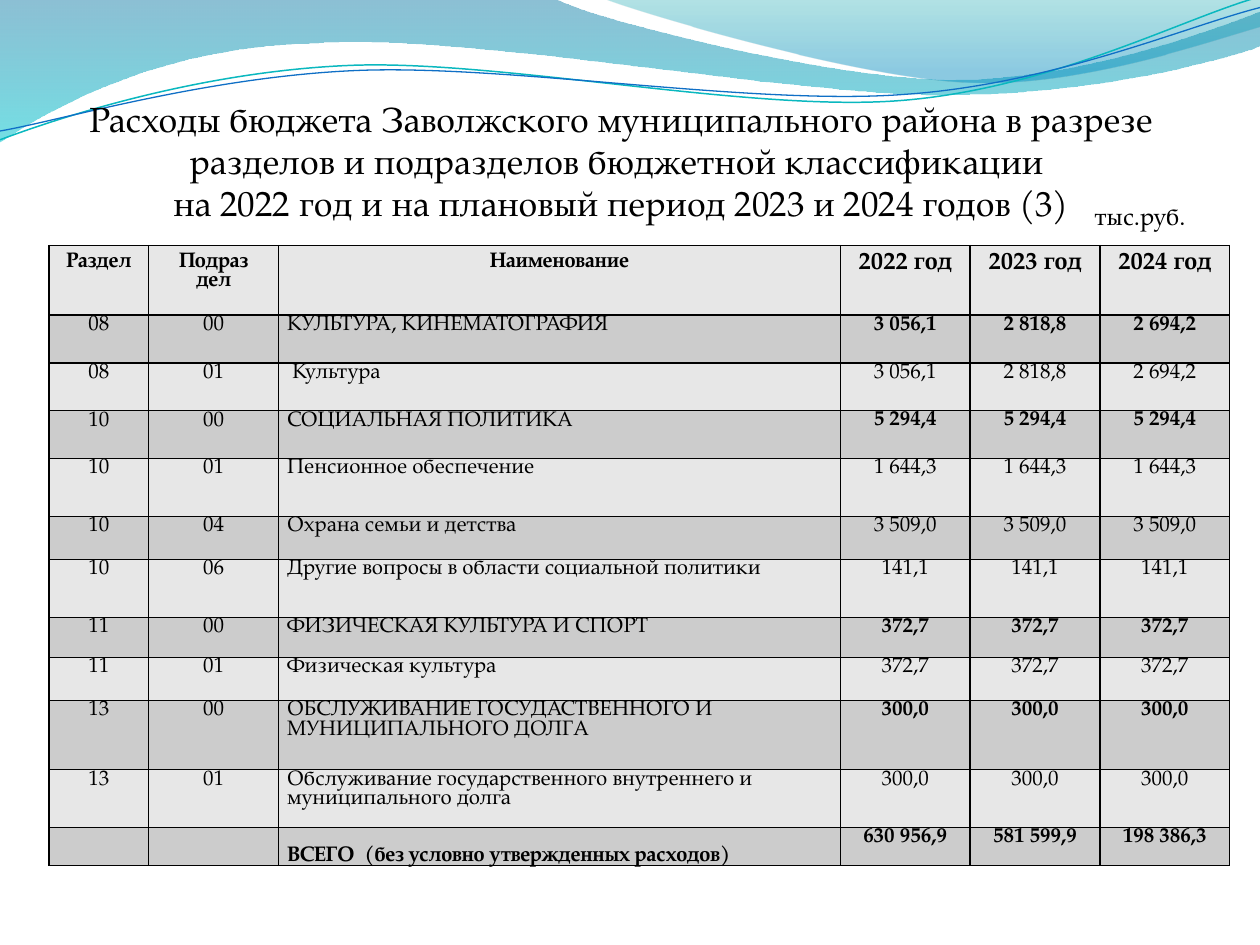
from dataclasses import dataclass
from typing import Optional

from lxml.etree import SubElement
from pptx import Presentation
from pptx.dml.color import RGBColor
from pptx.enum.lang import MSO_LANGUAGE_ID as Language
from pptx.enum.text import MSO_ANCHOR as Anchor, PP_ALIGN as Align
from pptx.oxml.ns import qn
from pptx.util import Inches, Pt

FONT = "TeX Gyre Pagella"
BLACK, LIGHT, DARK = "000000", "E7E7E7", "CCCCCC"


@dataclass
class Stop:
    position: float
    color: str
    opacity: int


@dataclass
class Wave:
    """Outline steps are points (x, y) or cubic curves (x1, y1, x2, y2, x, y)."""
    start: tuple
    steps: list
    stops: tuple = ()
    line: Optional[str] = None
    weight: float = 0


@dataclass
class BudgetRow:
    section: str
    subsection: str
    name: str
    amounts: tuple

    @property
    def is_total(self) -> bool:
        return not self.section

    @property
    def is_bold(self) -> bool:
        return self.subsection in ("00", "")


WAVES = [
    Wave((0, 0), [(4.4, -0.01), (4.76, 0.17, 6.64, 0.63, 7.58, 0.63),
                  (8.53, 0.63, 9.58, 0.26, 10, 0.09), (10.01, 0.36),
                  (9.83, 0.44, 8.7, 0.76, 7.46, 0.75),
                  (6.22, 0.75, 3.82, 0.28, 2.57, 0.34),
                  (1.29, 0.36, 0.46, 0.83, -0.01, 1.13)],
         stops=(Stop(0, "0074A1", 45), Stop(1, "00C6CF", 55))),
    Wave((4.79, -0.01), [(5.09, 0.11, 6.82, 0.62, 7.69, 0.65),
                         (8.56, 0.69, 9.61, 0.32, 10, 0.21), (10, 0)],
         stops=(Stop(0, "00A1A9", 30), Stop(0.8, "008BBF", 45))),
    Wave((0, 1.11), [(0.48, 0.93, 1.58, 0.57, 2.77, 0.52),
                     (3.95, 0.47, 5.93, 0.89, 7.13, 0.8),
                     (8.33, 0.71, 9.38, 0.15, 9.98, -0.02)],
         line="0AB8BF", weight=0.85),
    Wave((0, 1.04), [(0.47, 0.96, 1.64, 0.61, 2.83, 0.56),
                     (4.03, 0.51, 5.97, 0.84, 7.17, 0.75),
                     (8.36, 0.67, 9.41, 0.21, 10, 0.06)],
         line="0F6FC6", weight=0.75),
]

TITLE = ("Расходы бюджета Заволжского муниципального района в разрезе разделов "
         "и подразделов бюджетной классификации ",
         "на 2022 год и на плановый период 2023 и 2024 годов (3)")
HEADERS = ("Раздел", "Подраз\nдел", "Наименование", "2022 год", "2023 год", "2024 год")
ROWS = [
    BudgetRow("08", "00", "КУЛЬТУРА, КИНЕМАТОГРАФИЯ", ("3 056,1", "2 818,8", "2 694,2")),
    BudgetRow("08", "01", " Культура", ("3 056,1", "2 818,8", "2 694,2")),
    BudgetRow("10", "00", "СОЦИАЛЬНАЯ ПОЛИТИКА", ("5 294,4",) * 3),
    BudgetRow("10", "01", "Пенсионное обеспечение", ("1 644,3",) * 3),
    BudgetRow("10", "04", "Охрана семьи и детства", ("3 509,0",) * 3),
    BudgetRow("10", "06", "Другие вопросы в области социальной политики", ("141,1",) * 3),
    BudgetRow("11", "00", "ФИЗИЧЕСКАЯ КУЛЬТУРА И СПОРТ", ("372,7",) * 3),
    BudgetRow("11", "01", "Физическая культура", ("372,7",) * 3),
    BudgetRow("13", "00", "ОБСЛУЖИВАНИЕ ГОСУДАСТВЕННОГО И МУНИЦИПАЛЬНОГО ДОЛГА",
              ("300,0",) * 3),
    BudgetRow("13", "01", "Обслуживание государственного внутреннего и муниципального долга",
              ("300,0",) * 3),
    BudgetRow("", "", "ВСЕГО  (без условно утвержденных расходов)",
              ("630 956,9", "581 599,9", "198 386,3")),
]
NAME_COLUMN = 2
COLUMN_WIDTHS = (0.79, 1.03, 4.46, 1.03, 1.03, 1.03)
ROW_HEIGHTS = (0.55, 0.38, 0.38, 0.38, 0.46, 0.34, 0.46, 0.32, 0.34, 0.55, 0.46, 0.3)


def color(value: str) -> RGBColor:
    return RGBColor.from_string(value)


def apply(target, values: dict) -> None:
    for key, value in values.items():
        setattr(target, key, value)


def add_span(para, text: str, size: float, bold: bool = False) -> None:
    span = para.add_run()
    span.text = text
    apply(span.font, {"name": FONT, "size": Pt(size), "bold": bold,
                      "language_id": Language.RUSSIAN})
    span.font.color.rgb = color(BLACK)


def bend(shape, steps: list) -> None:
    """Join the three segments of each curved step into one cubic curve."""
    segments = iter(list(shape._element.iter(qn("a:lnTo"))))
    for step in steps:
        group = [next(segments) for _ in range(len(step) // 2)]
        if len(group) == 3:
            curve = SubElement(group[0].getparent(), qn("a:cubicBezTo"))
            group[0].addprevious(curve)
            for segment in group:
                curve.append(segment[0])
                segment.getparent().remove(segment)


def draw_wave(page, wave: Wave) -> None:
    points = [(Inches(step[i]), Inches(step[i + 1]))
              for step in wave.steps for i in range(0, len(step), 2)]
    builder = page.shapes.build_freeform(*map(Inches, wave.start))
    builder.add_line_segments(points, close=bool(wave.stops))
    shape = builder.convert_to_shape()
    bend(shape, wave.steps)
    shape.shadow.inherit = False
    if wave.line:
        shape.fill.background()
        shape.line.color.rgb = color(wave.line)
        shape.line.width = Pt(wave.weight)
        return
    shape.line.fill.background()
    shape.fill.gradient()
    shape.fill.gradient_angle = 270
    for target, stop in zip(shape.fill.gradient_stops, wave.stops):
        target.position = stop.position
        target.color.rgb = color(stop.color)
    for tint, stop in zip(shape._element.iter(qn("a:srgbClr")), wave.stops):
        SubElement(tint, qn("a:alpha"), val=str(stop.opacity * 1000))


def add_box(page, left: float, top: float, width: float, height: float, **frame_format):
    box = page.shapes.add_textbox(Inches(left), Inches(top), Inches(width), Inches(height))
    apply(box.text_frame, {"word_wrap": True, **frame_format})
    return box.text_frame.paragraphs[0]


def add_borders(cell) -> None:
    properties = cell._tc.get_or_add_tcPr()
    for side in ("a:lnL", "a:lnR", "a:lnT", "a:lnB"):
        border = SubElement(properties, qn(side), w=str(Pt(1)))
        fill = SubElement(border, qn("a:solidFill"))
        SubElement(fill, qn("a:srgbClr"), val=BLACK)


def fill_cell(cell, text: str, fill: str, size: float, bold: bool, align, **cell_format) -> None:
    add_borders(cell)
    cell.fill.solid()
    cell.fill.fore_color.rgb = color(fill)
    apply(cell, cell_format)
    frame = cell.text_frame
    for index, line in enumerate(text.split("\n")):
        para = frame.add_paragraph() if index else frame.paragraphs[0]
        apply(para, {"alignment": align, "line_spacing": 0.93})
        if line:
            add_span(para, line, size, bold)


def draw_table(page) -> None:
    table = page.shapes.add_table(
        len(ROW_HEIGHTS), len(COLUMN_WIDTHS), Inches(0.39), Inches(1.95),
        Inches(sum(COLUMN_WIDTHS)), Inches(sum(ROW_HEIGHTS))).table
    for column, width in zip(table.columns, COLUMN_WIDTHS):
        column.width = Inches(width)
    for row, height in zip(table.rows, ROW_HEIGHTS):
        row.height = Inches(height)

    for column, text in enumerate(HEADERS):
        size = 14 if column > NAME_COLUMN else 12
        fill_cell(table.cell(0, column), text, LIGHT, size, True, Align.CENTER)

    margins = {"margin_left": Inches(0.07), "margin_right": Inches(0.07),
               "margin_top": 0, "margin_bottom": 0}
    for index, row in enumerate(ROWS, start=1):
        for column, text in enumerate((row.section, row.subsection, row.name, *row.amounts)):
            is_name = column == NAME_COLUMN
            bold = row.is_total or (row.is_bold and column > NAME_COLUMN)
            anchor = Anchor.BOTTOM if row.is_total and is_name else Anchor.TOP
            fill_cell(table.cell(index, column), text, DARK if index % 2 else LIGHT, 12, bold,
                      Align.LEFT if is_name else Align.CENTER,
                      vertical_anchor=anchor, **margins)


def main() -> None:
    deck = Presentation()
    apply(deck, {"slide_width": Inches(10), "slide_height": Inches(7.5)})
    page = deck.slides.add_slide(deck.slide_layouts[6])

    # Decorative waves
    for wave in WAVES:
        draw_wave(page, wave)

    # Title
    para = add_box(page, 0.43, 0.52, 9, 1.25, vertical_anchor=Anchor.BOTTOM,
                   margin_left=0, margin_right=0, margin_bottom=0)
    para.alignment = Align.CENTER
    add_span(para, TITLE[0], 20)
    para.add_line_break()
    add_span(para, TITLE[1], 20)

    # Budget table and its unit
    draw_table(page)
    add_span(add_box(page, 8.59, 1.55, 1, 0.34), "тыс.руб.", 14)

    deck.save("out.pptx")


if __name__ == "__main__":
    main()
